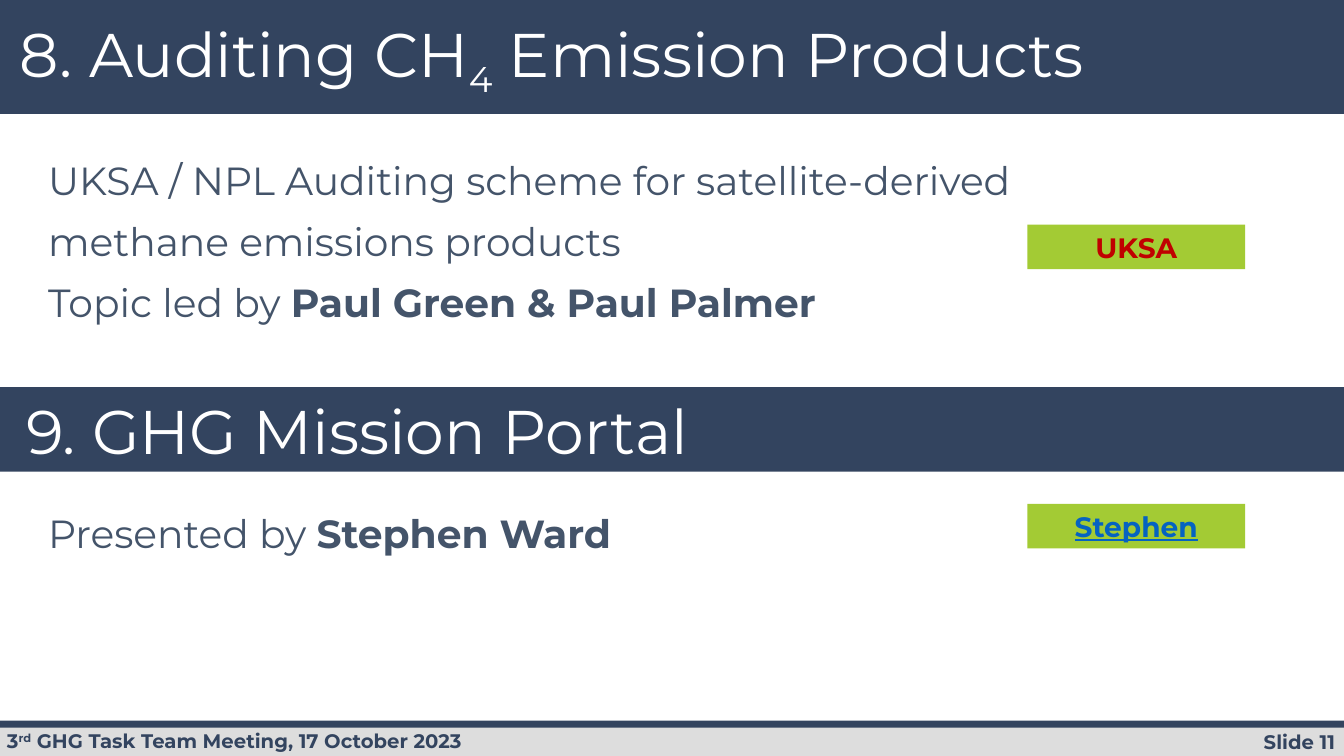
"""Agenda slide for items 8 and 9 of the GHG Task Team meeting."""
from pptx import Presentation
from pptx.dml.color import RGBColor
from pptx.enum.shapes import MSO_SHAPE as SHAPE
from pptx.enum.text import MSO_ANCHOR as ANCHOR, PP_ALIGN as ALIGN
from pptx.util import Pt

PX = 9144
NAVY = RGBColor(0x33, 0x44, 0x5F)
SLATE = RGBColor(0x44, 0x54, 0x6A)
GREY = RGBColor(0xDD, 0xDD, 0xDD)
GREEN = RGBColor(0xA3, 0xCB, 0x34)
RED = RGBColor(0xC0, 0x00, 0x00)
BLUE = RGBColor(0x05, 0x63, 0xC1)
WHITE = RGBColor(0xFF, 0xFF, 0xFF)


def add_bar(x, y, w, h, color):
    sp = s.shapes.add_shape(SHAPE.RECTANGLE, x * PX, y * PX, w * PX, h * PX)
    sp.shadow.inherit = False
    sp.fill.solid()
    sp.fill.fore_color.rgb = color
    sp.line.fill.background()
    return sp


def add_text(sp, paragraphs, size, color, align=ALIGN.LEFT, spacing=None):
    tf = sp.text_frame
    tf.word_wrap = True
    for i, runs in enumerate(paragraphs):
        p = tf.add_paragraph() if i else tf.paragraphs[0]
        p.alignment = align
        p.line_spacing = spacing
        for text, bold, baseline in runs:
            r = p.add_run()
            r.text = text
            r.font.name = "Montserrat"
            r.font.size = Pt(size)
            r.font.bold = bold
            r.font.color.rgb = color
            if baseline:
                r._r.get_or_add_rPr().set("baseline", str(baseline * 1000))
    return tf


prs = Presentation()
prs.slide_width, prs.slide_height = 1333 * PX, 750 * PX
s = prs.slides.add_slide(prs.slide_layouts[6])

add_bar(0, 0, 1333, 113, NAVY)
add_bar(0, 719, 1333, 31, GREY)
add_bar(0, 715, 1333, 7, NAVY)

title = [("8. Auditing CH", False, 0), ("4", False, -25), (" Emission Products", False, 0)]
scheme = [("UKSA / NPL Auditing scheme for satellite‐derived methane emissions products", False, 0)]
leads = [("Topic led by ", False, 0), ("Paul Green & Paul Palmer", True, 0)]
presenter = [("Presented by ", False, 0), ("Stephen Ward", True, 0)]
meeting = [("3", True, 0), ("rd", True, 30), (" GHG Task Team Meeting, 17 October 2023", True, 0)]
number = [("Slide 11", True, 0)]

for x, y, w, h, paragraphs, size, color, align, spacing in [
    (1123, 719, 211, 34, [number], 14, NAVY, ALIGN.RIGHT, None),
    (-3, 718, 539, 34, [meeting], 14, NAVY, ALIGN.LEFT, None),
    (10, 11, 1107, 84, [title], 44, WHITE, ALIGN.LEFT, None),
    (38, 136, 1044, 194, [scheme, leads], 28, SLATE, ALIGN.LEFT, 1.3),
    (38, 486, 962, 71, [presenter], 28, SLATE, ALIGN.LEFT, 1.3),
]:
    box = s.shapes.add_textbox(x * PX, y * PX, w * PX, h * PX)
    add_text(box, paragraphs, size, color, align, spacing)

portal = add_bar(0, 384, 1333, 84, NAVY)
tf = add_text(portal, [[("9. GHG Mission Portal", False, 0)]], 44, WHITE)
tf.margin_left = 26 * PX
tf.vertical_anchor = ANCHOR.MIDDLE

for y, label, color, underline in [(223, "UKSA", RED, False), (500, "Stephen", BLUE, True)]:
    tag = add_bar(1019, y, 216, 44, GREEN)
    tf = add_text(tag, [[(label, True, 0)]], 20, color, ALIGN.CENTER)
    tf.vertical_anchor = ANCHOR.MIDDLE
    tf.paragraphs[0].runs[0].font.underline = underline

prs.save("out.pptx")
